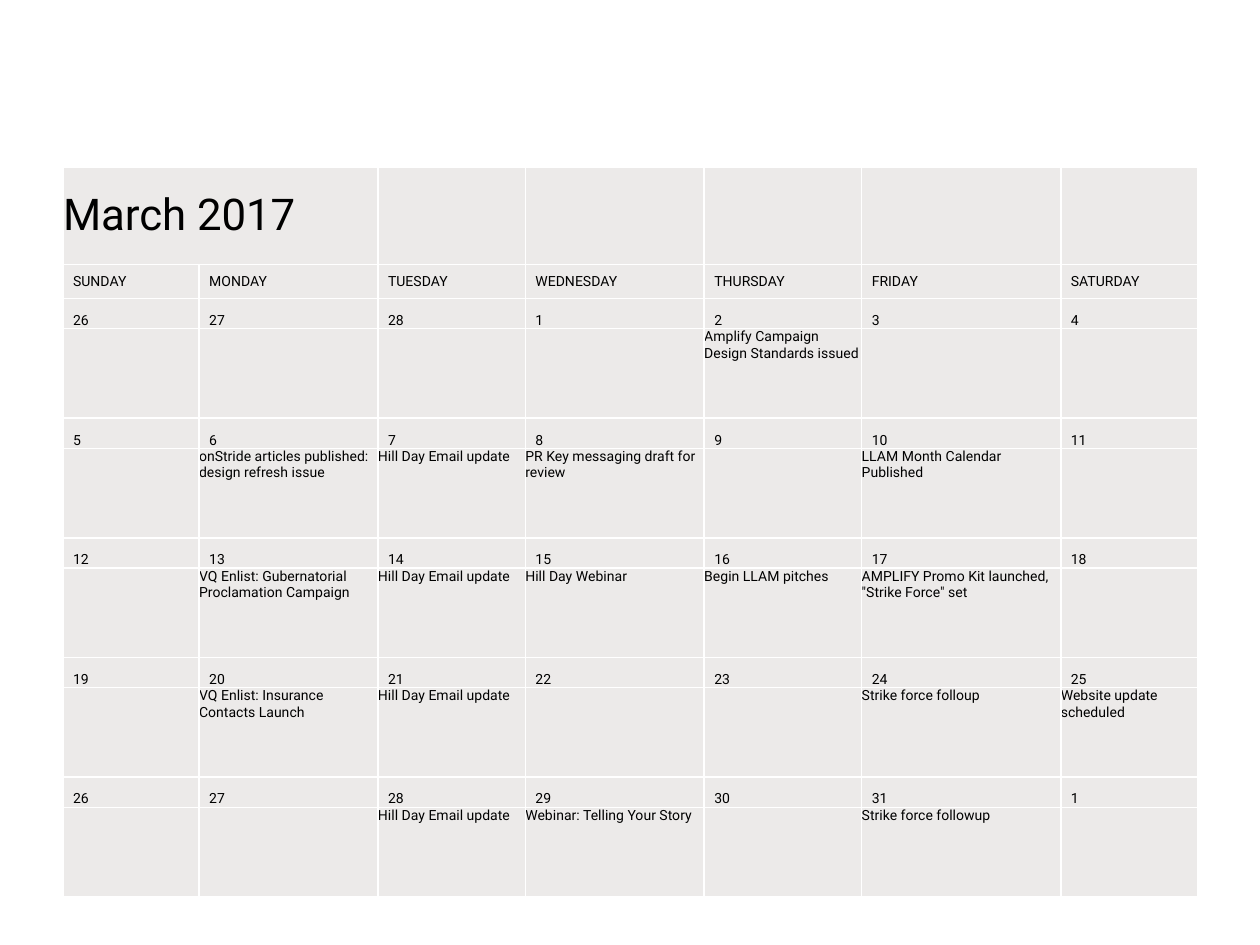
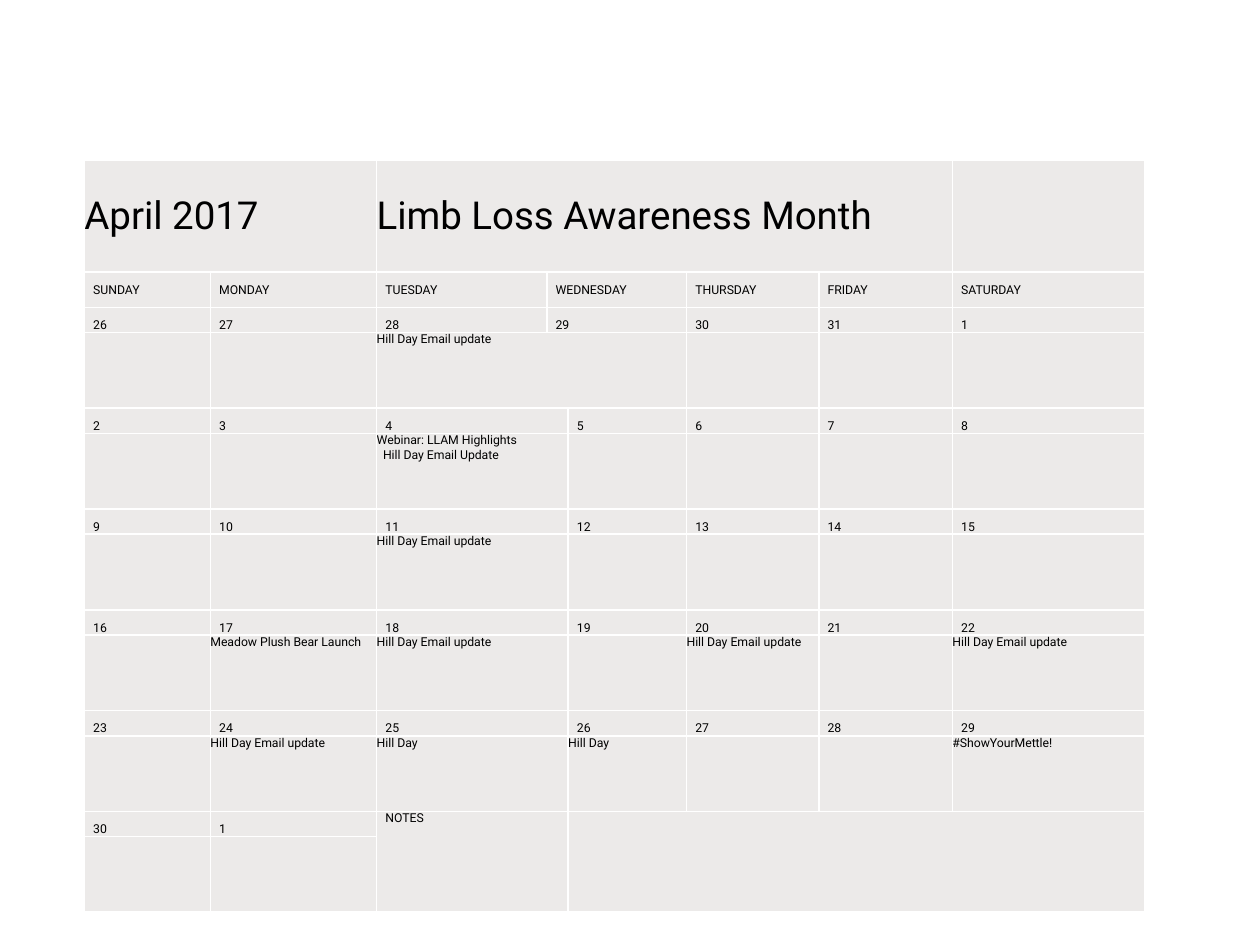
"""Build two monthly campaign calendars as table slides."""
from lxml.etree import SubElement
from pptx import Presentation
from pptx.dml.color import RGBColor
from pptx.enum.text import MSO_ANCHOR
from pptx.oxml.ns import qn
from pptx.util import Emu, Inches, Pt

FONT = "Roboto"
INK = RGBColor(0x00, 0x00, 0x00)
PANEL = RGBColor(0xEC, 0xEA, 0xE9)
GRID = RGBColor(0xFF, 0xFF, 0xFF)
GRID_WIDTH = Pt(1)
HANGING_LINE = Inches(0.05)
WEEKDAYS = ["SUNDAY", "MONDAY", "TUESDAY", "WEDNESDAY", "THURSDAY", "FRIDAY", "SATURDAY"]
SUN, MON, TUE, WED, THU, FRI, SAT = range(7)
EMAIL = "Hill Day Email update"

MARCH = {
    "corner": (0.5, 1.33),
    "columns": [1.08, 1.42, 1.17, 1.42, 1.25, 1.58, 1.09],
    "top_rows": [0.77, 0.27],
    "week_rows": [0.24, 0.71],
    "title_size": 25,
    "text_size": 8,
    "inset": 0.08,
    "titles": {0: "March 2017"},
    "dates": [*range(26, 29), *range(1, 32), 1],
    "spans": [(0, 0, 1, 2)],
    "events": {
        (0, THU): "Amplify Campaign Design Standards issued",
        (1, MON): "onStride articles published: design refresh issue",
        (1, TUE): EMAIL,
        (1, WED): "PR Key messaging draft for review",
        (1, FRI): "LLAM Month Calendar Published",
        (2, MON): "VQ Enlist: Gubernatorial Proclamation Campaign",
        (2, TUE): EMAIL,
        (2, WED): "Hill Day Webinar",
        (2, THU): "Begin LLAM pitches",
        (2, FRI): 'AMPLIFY Promo Kit launched, "Strike Force" set',
        (3, MON): "VQ Enlist: Insurance Contacts Launch",
        (3, TUE): EMAIL,
        (3, FRI): "Strike force folloup",
        (3, SAT): "Website update scheduled",
        (4, TUE): EMAIL,
        (4, WED): "Webinar: Telling Your Story",
        (4, FRI): "Strike force followup",
    },
}

APRIL = {
    "corner": (0.67, 1.27),
    "columns": [1, 1.32, 1.35, 0.17, 0.94, 1.05, 1.06, 1.53],
    "top_rows": [0.89, 0.28],
    "week_rows": [0.2, 0.6],
    "title_size": 22,
    "text_size": 7,
    "inset": 0.07,
    "titles": {0: "April 2017", 2: "Limb Loss Awareness Month"},
    "dates": [*range(26, 32), *range(1, 31), 1],
    "spans": [
        (0, 0, 1, 2), (0, 2, 1, 5), (1, 3, 1, 2), (2, 3, 1, 2), (3, 2, 1, 3),
        *((row, 2, 1, 2) for row in range(4, 12)),
        (12, 2, 2, 2), (12, 4, 2, 4),
    ],
    "notes": (12, 2),
    "events": {
        (0, TUE): EMAIL,
        (1, TUE): "Webinar: LLAM Highlights\nHill Day Email Update",
        (2, TUE): EMAIL,
        (3, MON): "Meadow Plush Bear Launch",
        (3, TUE): EMAIL,
        (3, THU): EMAIL,
        (3, SAT): EMAIL,
        (4, MON): EMAIL,
        (4, TUE): "Hill Day",
        (4, WED): "Hill Day",
        (4, SAT): "#ShowYourMettle!",
    },
}


def style_cell(cell):
    """Give a cell its panel fill, grid lines and zero margins."""
    cell.margin_left = cell.margin_right = cell.margin_top = cell.margin_bottom = 0
    properties = cell._tc.get_or_add_tcPr()
    for side in ("lnL", "lnR", "lnT", "lnB"):
        line = SubElement(properties, qn(f"a:{side}"), w=str(GRID_WIDTH))
        SubElement(SubElement(line, qn("a:solidFill")), qn("a:srgbClr"), val=str(GRID))
    cell.fill.solid()
    cell.fill.fore_color.rgb = PANEL


def write(cell, text, size, anchor=MSO_ANCHOR.TOP, inset=0):
    """Write text in a cell, indenting each line after the first."""
    cell.text = text
    cell.vertical_anchor = anchor
    cell.margin_left = Inches(inset)
    for index, para in enumerate(cell.text_frame.paragraphs):
        if index:
            para._p.get_or_add_pPr().set("marL", str(HANGING_LINE))
        para.font.name = FONT
        para.font.size = Pt(size)
        para.font.color.rgb = INK


def add_calendar(deck, month):
    """Add one slide holding a month's calendar table."""
    page = deck.slides.add_slide(deck.slide_layouts[6])
    dates, size, inset = month["dates"], month["text_size"], month["inset"]
    weeks = [dates[start:start + 7] for start in range(0, len(dates), 7)]
    widths = [Inches(width) for width in month["columns"]]
    heights = [Inches(height) for height in month["top_rows"] + month["week_rows"] * len(weeks)]
    left, top = map(Inches, month["corner"])
    frame = page.shapes.add_table(
        len(heights), len(widths), left, top, Emu(sum(widths)), Emu(sum(heights)))
    table = frame.table
    table.first_row = table.horz_banding = False
    for column, width in zip(table.columns, widths):
        column.width = width
    for row, height in zip(table.rows, heights):
        row.height = height
    for cell in table.iter_cells():
        style_cell(cell)
        write(cell, "", size)
    for row, column, height, width in month["spans"]:
        table.cell(row, column).merge(table.cell(row + height - 1, column + width - 1))

    open_cells = [[cell for cell in row.cells if not cell.is_spanned] for row in table.rows]
    for column, title in month["titles"].items():
        write(table.cell(0, column), title, month["title_size"], MSO_ANCHOR.MIDDLE)
    for cell, weekday in zip(open_cells[1], WEEKDAYS):
        write(cell, weekday, size, MSO_ANCHOR.MIDDLE, inset)
    for week, days in enumerate(weeks):
        for cell, day in zip(open_cells[2 + 2 * week], days):
            write(cell, str(day), size, MSO_ANCHOR.BOTTOM, inset)
    for (week, weekday), event in month["events"].items():
        write(open_cells[3 + 2 * week][weekday], event, size)
    if "notes" in month:
        write(table.cell(*month["notes"]), "NOTES", size, inset=inset)


def main():
    """Create and save the deck."""
    deck = Presentation()
    deck.slide_width, deck.slide_height = Inches(10), Inches(7.5)
    for month in (MARCH, APRIL):
        add_calendar(deck, month)
    deck.save("out.pptx")


if __name__ == "__main__":
    main()
